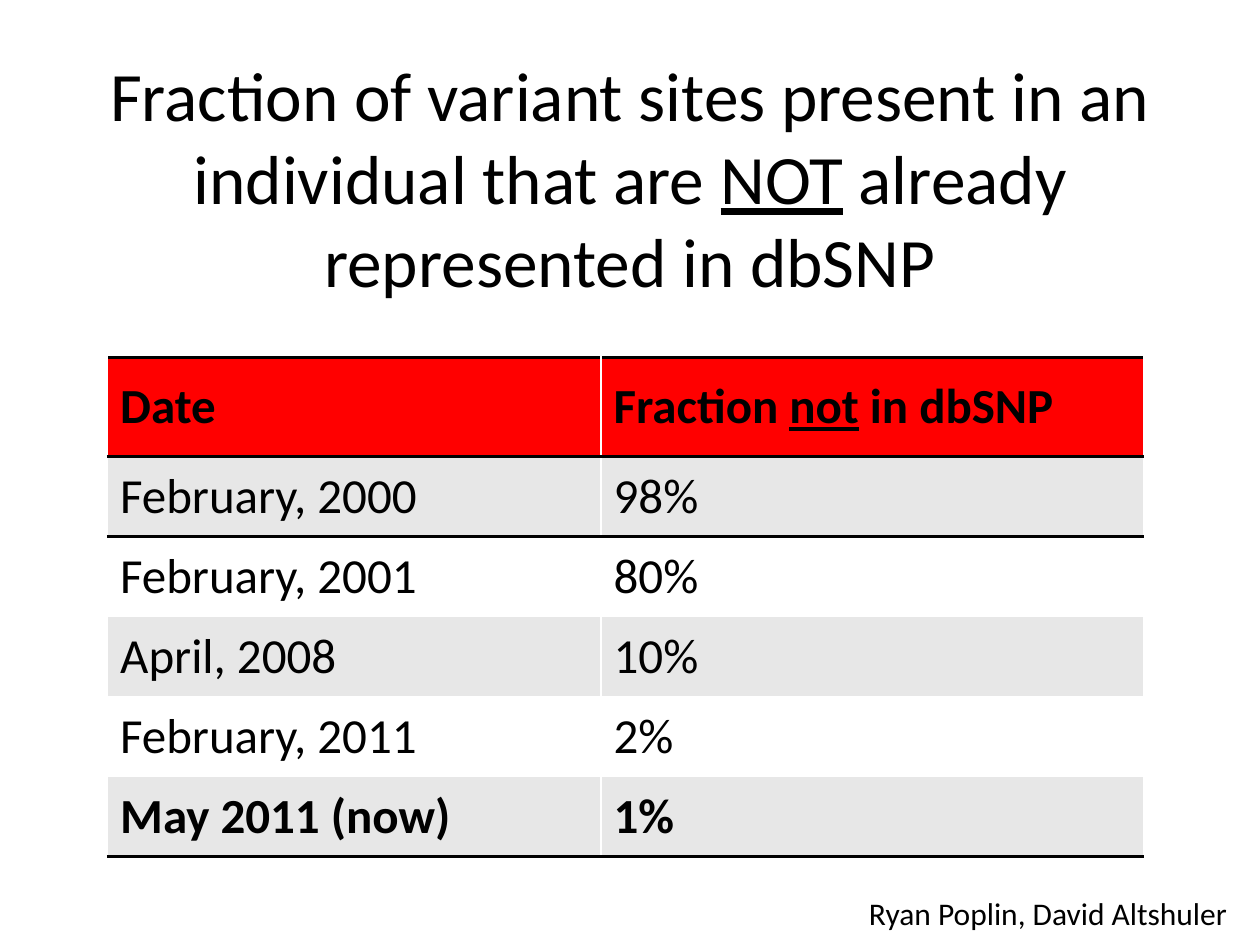
from dataclasses import dataclass

from lxml import etree
from pptx import Presentation
from pptx.dml.color import RGBColor
from pptx.enum import text
from pptx.oxml import ns
from pptx.util import Pt


@dataclass(frozen=True)
class Theme:
    face: str = "Calibri"
    ink: str = "000000"
    head: str = "FF0000"
    band: str = "E7E7E7"
    plain: str = "FFFFFF"
    title: float = 39.6
    body: float = 28
    note: float = 18
    rule: float = 2


THEME = Theme()
TITLE = ("Fraction of variant sites present in an individual that are ",
         "NOT", " already represented in dbSNP")
ROWS = [
    (("Date",), ("Fraction ", "not", " in dbSNP")),
    (("February, 2000",), ("98%",)),
    (("February, 2001",), ("80%",)),
    (("April, 2008",), ("10%",)),
    (("February, 2011",), ("2%",)),
    (("May 2011 (now)",), ("1%",)),
]


def write(frame, parts, size, bold=False, align=text.PP_ALIGN.LEFT):
    para = frame.paragraphs[0]
    para.alignment = align
    font = para.font
    font.name, font.size, font.bold = THEME.face, Pt(size), bold
    font.color.rgb = RGBColor.from_string(THEME.ink)
    for i, part in enumerate(parts):
        run = para.add_run()
        run.text = part
        if i == 1:
            run.font.underline = True


def add_rule(cell, side):
    props = cell._tc.get_or_add_tcPr()
    line = etree.SubElement(props, ns.qn(f"a:ln{side}"), w=str(Pt(THEME.rule)))
    fill = etree.SubElement(line, ns.qn("a:solidFill"))
    etree.SubElement(fill, ns.qn("a:srgbClr"), val=THEME.ink)


def add_title(slide, left, top, width, height):
    title = slide.shapes.title
    title.left, title.top = Pt(left), Pt(top)
    title.width, title.height = Pt(width), Pt(height)
    frame = title.text_frame
    frame.auto_size = text.MSO_AUTO_SIZE.NONE
    frame.vertical_anchor = text.MSO_ANCHOR.MIDDLE
    write(frame, TITLE, THEME.title, align=text.PP_ALIGN.CENTER)


def add_grid(slide, left, top, width, height):
    last = len(ROWS) - 1
    first = 282
    head = 56.5
    table = slide.shapes.add_table(
        len(ROWS), 2, Pt(left), Pt(top), Pt(width), Pt(height)).table
    for col, span in zip(table.columns, (first, width - first)):
        col.width = Pt(span)
    for r, row in enumerate(ROWS):
        table.rows[r].height = Pt(head if r == 0 else (height - head) / last)
        tint = THEME.head if r == 0 else THEME.band if r % 2 else THEME.plain
        sides = {0: "TB", 1: "T", last: "B"}.get(r, "")
        for c, parts in enumerate(row):
            cell = table.cell(r, c)
            for side in sides:
                add_rule(cell, side)
            cell.fill.solid()
            cell.fill.fore_color.rgb = RGBColor.from_string(tint)
            cell.vertical_anchor = text.MSO_ANCHOR.MIDDLE
            write(cell.text_frame, parts, THEME.body, r in (0, last))


def add_credit(slide, left, top, width, height):
    box = slide.shapes.add_textbox(Pt(left), Pt(top), Pt(width), Pt(height))
    frame = box.text_frame
    frame.word_wrap = False
    frame.auto_size = text.MSO_AUTO_SIZE.SHAPE_TO_FIT_TEXT
    write(frame, ("Ryan Poplin, David Altshuler",), THEME.note)


def main():
    deck = Presentation()
    deck.slide_width, deck.slide_height = Pt(720), Pt(540)
    slide = deck.slides.add_slide(deck.slide_layouts[5])
    add_title(slide, 54, 43, 612, 116)
    add_grid(slide, 61.5, 204.5, 592, 285)
    add_credit(slide, 489.5, 507.5, 221, 29)
    deck.save("out.pptx")


if __name__ == "__main__":
    main()
